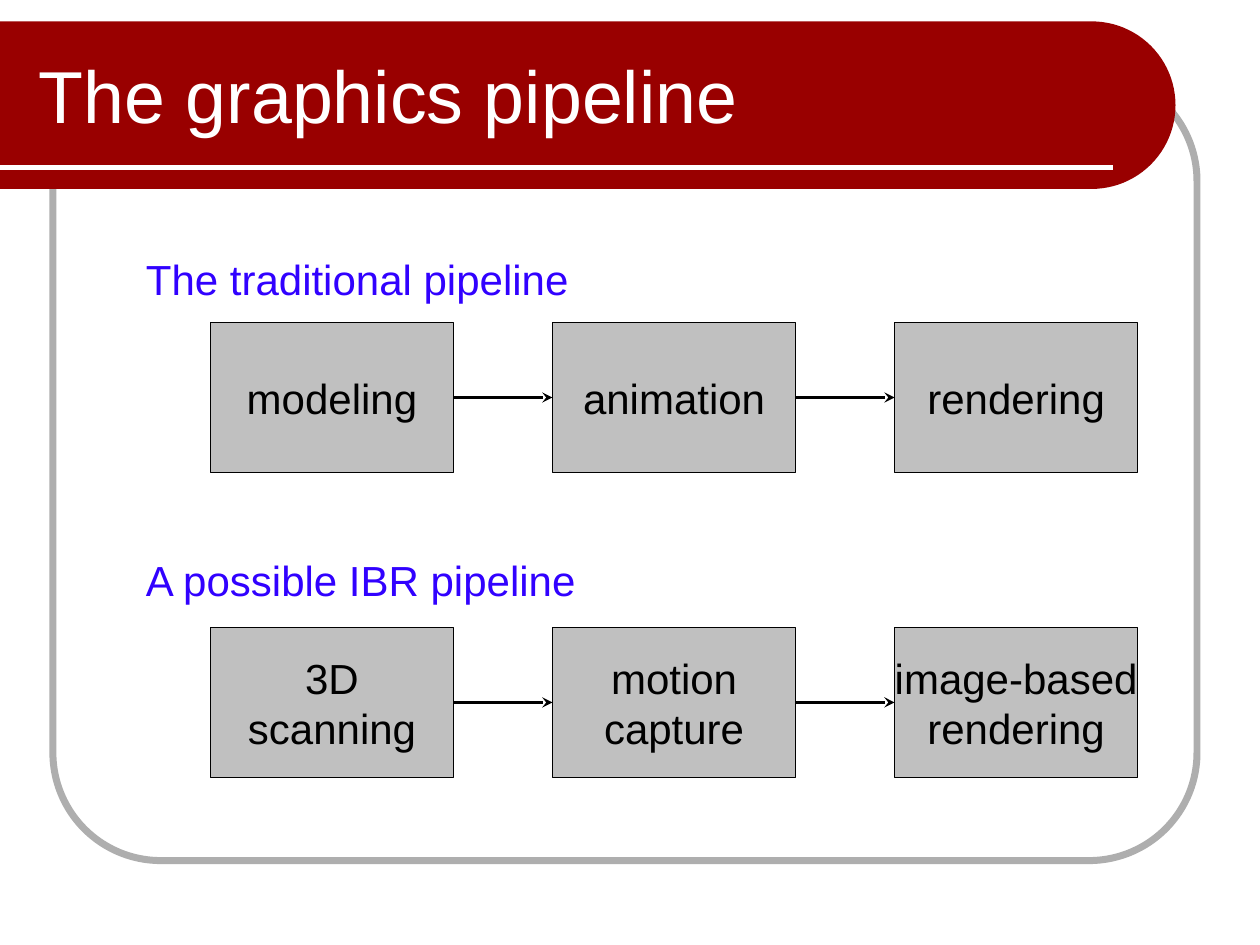
from dataclasses import dataclass
from itertools import pairwise
from math import cos, pi, sin

from lxml.etree import SubElement
from pptx import Presentation
from pptx.dml.color import RGBColor
from pptx.enum.shapes import MSO_CONNECTOR as Connector, MSO_SHAPE as Preset
from pptx.enum.text import MSO_ANCHOR as Anchor, MSO_AUTO_SIZE as AutoSize, PP_ALIGN as Align
from pptx.oxml.ns import qn
from pptx.shapes.autoshape import Shape
from pptx.shapes.connector import Connector as Line
from pptx.slide import Slide
from pptx.util import Inches, Pt

COLORS = {
    "banner": "990000",
    "frame": "AEAEAE",
    "white": "FFFFFF",
    "box": "C0C0C0",
    "black": "000000",
    "heading": "3101FF",
}
FONT = "Arial"
BANNER_TOP, BANNER_RIGHT, BANNER_RADIUS = 0.17, 9.33, 0.665
ARC_STEPS = 48
GRID_LEFT, GRID_TOP = 1.67, 2.56
COLUMN_PITCH, ROW_PITCH = 2.715, 2.42
BOX_WIDTH, BOX_HEIGHT = 1.93, 1.19
RIGHT_SIDE, LEFT_SIDE = 3, 1


@dataclass(frozen=True)
class Pipeline:
    heading: str
    heading_top: float
    heading_width: float
    stages: tuple[str, ...]


PIPELINES = (
    Pipeline("The traditional pipeline", 1.96, 3.59, ("modeling", "animation", "rendering")),
    Pipeline("A possible IBR pipeline", 4.35, 3.74,
             ("3D\vscanning", "motion\vcapture", "image-based\nrendering")),
)


def color(name: str) -> RGBColor:
    return RGBColor.from_string(COLORS[name])


def write(shape: Shape, text: str, *, size: float = 24, ink: str = "black",
          align: Align = Align.LEFT, anchor: Anchor = Anchor.TOP, wrap: bool = False) -> None:
    frame = shape.text_frame
    frame.word_wrap = wrap
    frame.vertical_anchor = anchor
    frame.text = text
    for paragraph in frame.paragraphs:
        paragraph.alignment = align
        for run in paragraph.runs:
            run.font.name = FONT
            run.font.size = Pt(size)
            run.font.color.rgb = color(ink)


def add_text_box(slide: Slide, left: float, top: float, width: float, height: float) -> Shape:
    return slide.shapes.add_textbox(Inches(left), Inches(top), Inches(width), Inches(height))


def add_line(slide: Slide, start: tuple[float, float], end: tuple[float, float],
             ink: str, weight: float) -> Line:
    line = slide.shapes.add_connector(Connector.STRAIGHT, *map(Inches, start + end))
    line.line.color.rgb = color(ink)
    line.line.width = Pt(weight)
    SubElement(line._element.spPr, qn("a:effectLst"))
    return line


def add_frame(slide: Slide) -> None:
    frame = slide.shapes.add_shape(
        Preset.ROUNDED_RECTANGLE, Inches(0.42), Inches(0.58), Inches(9.08), Inches(6.25))
    frame.adjustments[0] = 0.137
    frame.shadow.inherit = False
    frame.fill.background()
    frame.line.color.rgb = color("frame")
    frame.line.width = Pt(4)


def add_banner(slide: Slide) -> None:
    center_x = BANNER_RIGHT - BANNER_RADIUS
    center_y = BANNER_TOP + BANNER_RADIUS
    angles = [pi * step / ARC_STEPS - pi / 2 for step in range(ARC_STEPS + 1)]
    arc = [(center_x + BANNER_RADIUS * cos(angle), center_y + BANNER_RADIUS * sin(angle))
           for angle in angles]
    outline = arc + [(0, BANNER_TOP + 2 * BANNER_RADIUS)]
    builder = slide.shapes.build_freeform(0, Inches(BANNER_TOP))
    builder.add_line_segments([(Inches(x), Inches(y)) for x, y in outline], close=True)
    banner = builder.convert_to_shape()
    banner.shadow.inherit = False
    banner.fill.solid()
    banner.fill.fore_color.rgb = color("banner")
    banner.line.fill.background()


def add_stage(slide: Slide, column: int, row: int, label: str) -> Shape:
    box = slide.shapes.add_shape(
        Preset.RECTANGLE,
        Inches(GRID_LEFT + column * COLUMN_PITCH), Inches(GRID_TOP + row * ROW_PITCH),
        Inches(BOX_WIDTH), Inches(BOX_HEIGHT))
    box.shadow.inherit = False
    box.fill.solid()
    box.fill.fore_color.rgb = color("box")
    box.line.color.rgb = color("black")
    box.line.width = Pt(0.75)
    write(box, label, align=Align.CENTER, anchor=Anchor.MIDDLE)
    return box


def add_arrow(slide: Slide, source: Shape, target: Shape) -> None:
    arrow = add_line(slide, (0, 0), (1, 0), "black", 1.5)
    arrow.begin_connect(source, RIGHT_SIDE)
    arrow.end_connect(target, LEFT_SIDE)
    SubElement(arrow.line._get_or_add_ln(), qn("a:tailEnd"), type="stealth")


def add_pipeline(slide: Slide, row: int, pipeline: Pipeline) -> None:
    boxes = [add_stage(slide, column, row, label)
             for column, label in enumerate(pipeline.stages)]
    for source, target in pairwise(boxes):
        add_arrow(slide, source, target)
    heading = add_text_box(slide, 1.06, pipeline.heading_top, pipeline.heading_width, 0.51)
    write(heading, pipeline.heading, ink="heading")
    heading.text_frame.auto_size = AutoSize.SHAPE_TO_FIT_TEXT


def main() -> None:
    presentation = Presentation()
    presentation.slide_width = Inches(10)
    presentation.slide_height = Inches(7.5)
    slide = presentation.slides.add_slide(presentation.slide_layouts[6])
    add_frame(slide)
    add_banner(slide)
    add_line(slide, (0, 1.33), (8.83, 1.33), "white", 3)
    title = add_text_box(slide, 0.21, 0.25, 7.79, 1)
    write(title, "The graphics pipeline", size=42, ink="white", anchor=Anchor.MIDDLE, wrap=True)
    for row, pipeline in enumerate(PIPELINES):
        add_pipeline(slide, row, pipeline)
    presentation.save("out.pptx")


if __name__ == "__main__":
    main()
